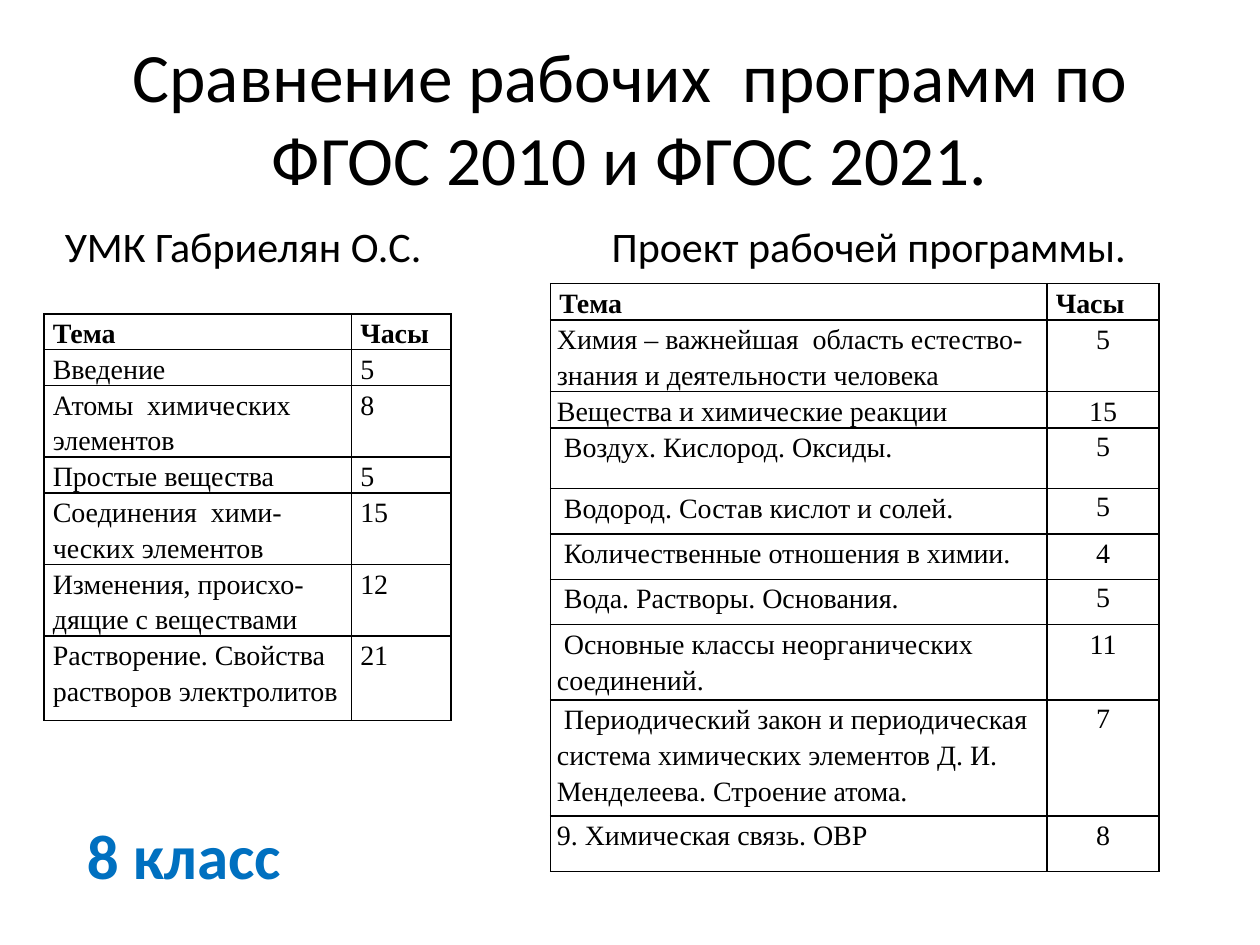
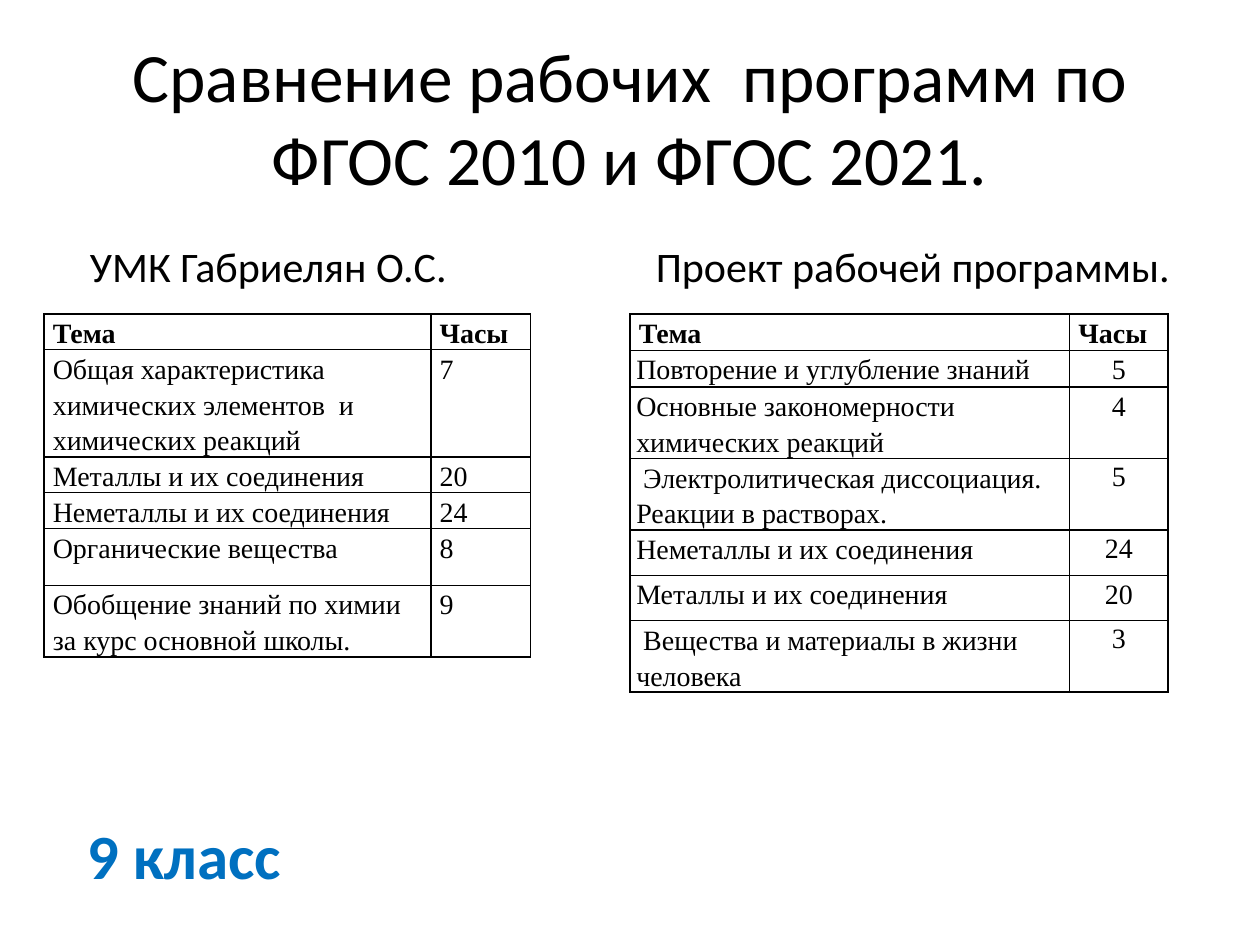
from dataclasses import dataclass

from lxml import etree
from pptx import Presentation
from pptx import util as u
from pptx.dml import color
from pptx.enum import text
from pptx.oxml import ns

COLOURS = {"ink": "000000", "grade": "0070C0"}
HEADING_FONT = "Calibri"
TABLE_FONT = "Times New Roman"
TITLE = "Сравнение рабочих  программ по ФГОС 2010 и ФГОС 2021."
LOWERED_LINE = u.Pt(9.8)


@dataclass(frozen=True)
class Topic:
    name: str
    hours: str
    height: float
    lowered: bool = False


@dataclass(frozen=True)
class Programme:
    heading: str
    heading_box: tuple[float, float, float, float]
    table_at: tuple[float, float]
    columns: tuple[float, float]
    header_height: float
    topics: tuple[Topic, ...]
    inset: float = 0.07
    hours_align: text.PP_ALIGN = text.PP_ALIGN.LEFT
    heading_indent: float = -0.38


@dataclass(frozen=True)
class Grade:
    label: str
    programmes: tuple[Programme, Programme]


def textbook(heading_box, columns, topics) -> Programme:
    return Programme("УМК Габриелян О.С.", heading_box, (0.35, 2.49), columns, 0.28, topics)


def draft(heading_box, table_at, columns, topics, heading_indent=-0.38) -> Programme:
    return Programme("Проект рабочей программы.", heading_box, table_at, columns, 0.29, topics,
                     0.05, text.PP_ALIGN.CENTER, heading_indent)


GRADES = (
    Grade("8 класс", (
        textbook((0, 1.7, 3.86, 0.58), (2.44, 0.79), (
            Topic("Введение", "5", 0.28),
            Topic("Атомы  химических элементов", "8", 0.28),
            Topic("Простые вещества", "5", 0.28),
            Topic("Соединения  хими-ческих элементов", "15", 0.45),
            Topic("Изменения, происхо-дящие с веществами", "12", 0.45),
            Topic("Растворение. Свойства растворов электролитов", "21", 0.67),
        )),
        draft((4.29, 1.7, 5.21, 0.9), (4.37, 2.25), (3.94, 0.89), (
            Topic("Химия – важнейшая  область естество-знания и деятельности человека", "5", 0.29),
            Topic("Вещества и химические реакции", "15", 0.29),
            Topic(" Воздух. Кислород. Оксиды.", "5", 0.48, True),
            Topic(" Водород. Состав кислот и солей.", "5", 0.36, True),
            Topic(" Количественные отношения в химии.", "4", 0.36),
            Topic(" Вода. Растворы. Основания.", "5", 0.36, True),
            Topic(" Основные классы неорганических соединений.", "11", 0.6),
            Topic(" Периодический закон и периодическая система химических элементов "
                  "Д. И. Менделеева. Строение атома.", "7", 0.92, True),
            Topic("9. Химическая связь. ОВР", "8", 0.44),
        )),
    )),
    Grade("9 класс", (
        textbook((0.2, 1.86, 3.86, 0.58), (3.07, 0.79), (
            Topic("Общая характеристика химических элементов  и химических реакций", "7", 0.28),
            Topic("Металлы и их соединения", "20", 0.28),
            Topic("Неметаллы и их соединения", "24", 0.28),
            Topic("Органические вещества", "8", 0.45),
            Topic("Обобщение знаний по химии за курс основной школы.", "9", 0.45),
        )),
        draft((4.45, 1.86, 5.21, 0.9), (5, 2.49), (3.49, 0.78), (
            Topic("Повторение и углубление знаний", "5", 0.29),
            Topic("Основные закономерности химических реакций", "4", 0.29),
            Topic(" Электролитическая диссоциация. Реакции в растворах.", "5", 0.48, True),
            Topic("Неметаллы и их соединения", "24", 0.36, True),
            Topic("Металлы и их соединения", "20", 0.36),
            Topic(" Вещества и материалы в жизни человека", "3", 0.36, True),
        ), heading_indent=0),
    )),
)


def add_run(paragraph, words: str, size: float, font: str, bold: bool = False,
            colour: str = "ink") -> None:
    run = paragraph.add_run()
    run.text = words
    run.font.size = u.Pt(size)
    run.font.name = font
    run.font.bold = bold
    run.font.color.rgb = color.RGBColor.from_string(COLOURS[colour])


def fill_placeholder(placeholder, box: tuple[float, ...], words: str, size: float):
    placeholder.left, placeholder.top, placeholder.width, placeholder.height = map(u.Inches, box)
    placeholder.text_frame.auto_size = text.MSO_AUTO_SIZE.NONE
    paragraph = placeholder.text_frame.paragraphs[0]
    paragraph.alignment = text.PP_ALIGN.CENTER
    add_run(paragraph, words, size, HEADING_FONT)
    return paragraph


def add_heading(placeholder, programme: Programme) -> None:
    paragraph = fill_placeholder(placeholder, programme.heading_box, programme.heading, 24)
    properties = paragraph._p.get_or_add_pPr()
    properties.set("marL", str(u.Inches(0.38)))
    properties.set("indent", str(u.Inches(programme.heading_indent)))
    etree.SubElement(properties, ns.qn("a:buNone"))


def add_borders(cell) -> None:
    properties = cell._tc.get_or_add_tcPr()
    for side in ("lnL", "lnR", "lnT", "lnB"):
        line = etree.SubElement(properties, ns.qn(f"a:{side}"), w=str(u.Pt(1)))
        fill = etree.SubElement(line, ns.qn("a:solidFill"))
        etree.SubElement(fill, ns.qn("a:srgbClr"), val=COLOURS["ink"])


def fill_cell(cell, words: str, inset: float, bold: bool = False,
              align: text.PP_ALIGN = text.PP_ALIGN.LEFT, lowered: bool = False) -> None:
    add_borders(cell)
    cell.fill.background()
    cell.margin_left = cell.margin_right = u.Inches(inset)
    cell.margin_top = LOWERED_LINE if lowered else 0
    cell.margin_bottom = 0
    paragraph = cell.text_frame.paragraphs[0]
    paragraph.alignment = align
    paragraph.line_spacing = LOWERED_LINE if lowered else 1.15
    add_run(paragraph, words, 16, TABLE_FONT, bold)


def add_hours_table(slide, programme: Programme) -> None:
    heights = [programme.header_height, *(topic.height for topic in programme.topics)]
    left, top = map(u.Inches, programme.table_at)
    table = slide.shapes.add_table(len(heights), 2, left, top, u.Inches(sum(programme.columns)),
                                   u.Inches(sum(heights))).table
    table.first_row = table.horz_banding = False
    for column, width in zip(table.columns, programme.columns):
        column.width = u.Inches(width)
    for row, height in zip(table.rows, heights):
        row.height = u.Inches(height)
    for column, label in enumerate(("Тема", "Часы")):
        fill_cell(table.cell(0, column), label, 0.07, bold=True)
    for row, topic in enumerate(programme.topics, start=1):
        fill_cell(table.cell(row, 0), topic.name, programme.inset)
        fill_cell(table.cell(row, 1), topic.hours, programme.inset,
                  align=programme.hours_align, lowered=topic.lowered)


def add_grade_label(slide, label: str) -> None:
    frame = slide.shapes.add_textbox(*map(u.Inches, (0.59, 6.43, 2.28, 0.71))).text_frame
    frame.word_wrap = True
    frame.auto_size = text.MSO_AUTO_SIZE.SHAPE_TO_FIT_TEXT
    add_run(frame.paragraphs[0], label, 36, HEADING_FONT, bold=True, colour="grade")


def add_grade_slide(deck, grade: Grade) -> None:
    slide = deck.slides.add_slide(deck.slide_layouts.get_by_name("Two Content"))
    title, *headings = slide.placeholders
    fill_placeholder(title, (0.5, 0.3, 9, 1.25), TITLE, 39.6)
    for heading, programme in zip(headings, grade.programmes):
        add_heading(heading, programme)
        add_hours_table(slide, programme)
    add_grade_label(slide, grade.label)


def main() -> None:
    deck = Presentation()
    deck.slide_width, deck.slide_height = u.Inches(10), u.Inches(7.5)
    for grade in GRADES:
        add_grade_slide(deck, grade)
    deck.save("out.pptx")


if __name__ == "__main__":
    main()
